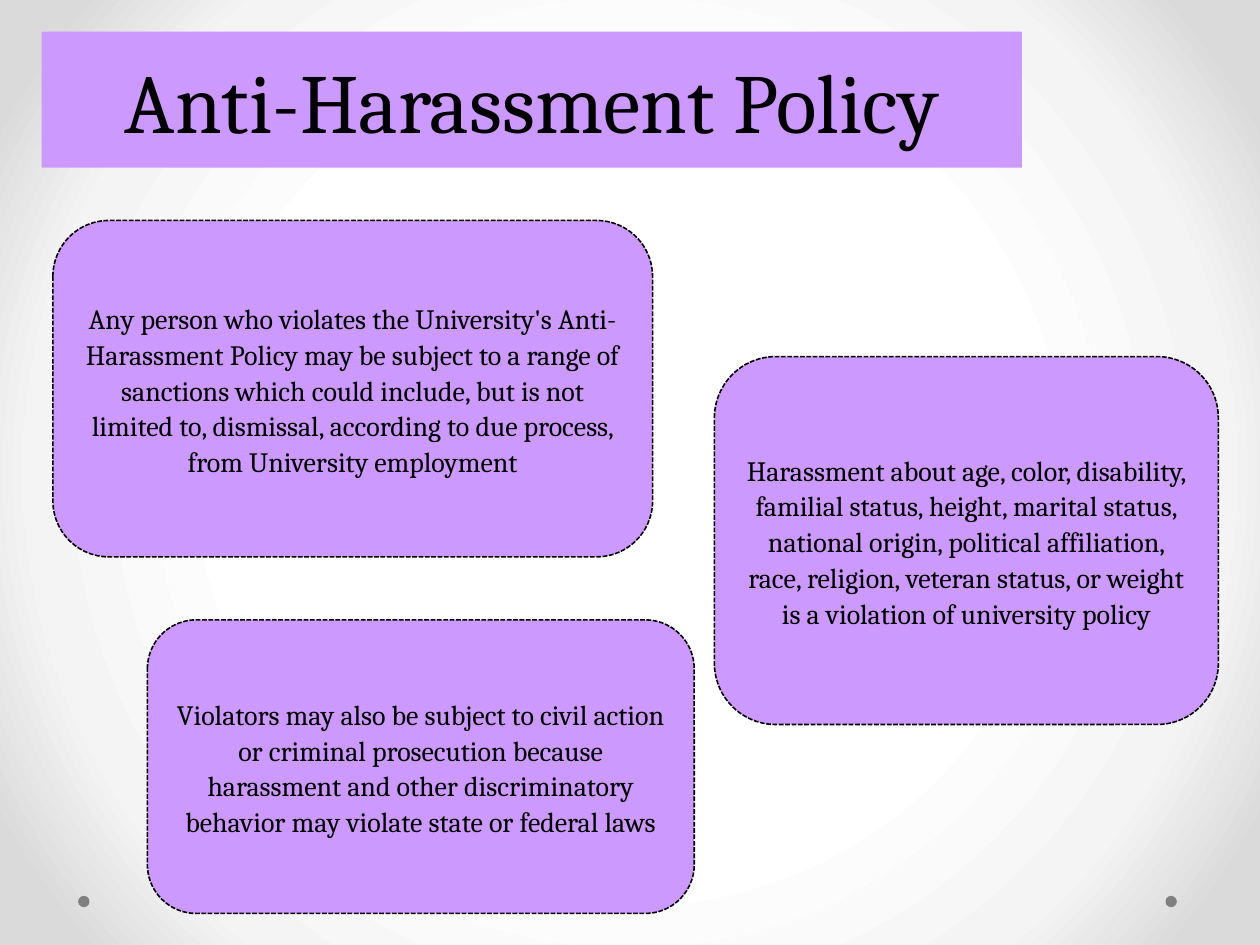
import pptx
import pptx.dml.color
import pptx.enum.dml
import pptx.enum.shapes
import pptx.enum.text
import pptx.oxml
import pptx.oxml.ns
import pptx.util

Inches = pptx.util.Inches
Pt = pptx.util.Pt
RGBColor = pptx.dml.color.RGBColor
Shape = pptx.enum.shapes.MSO_SHAPE

LILAC = RGBColor(0xCC, 0x99, 0xFF)
BLACK = RGBColor(0, 0, 0)
GRAY = RGBColor(0x80, 0x80, 0x80)
FONT = "Cambria"

BACKGROUND_STOPS = [(50, "FFFFFF"), (76, "F4F4F4"), (92, "DADADA")]
DOT_LEFTS = [0.62, 9.25]
POLICIES = [
    ((5.67, 2.83, 4, 2.92),
     "Harassment about age, color, disability, familial status, height, "
     "marital status, national origin, political affiliation, race, religion, "
     "veteran status, or weight is a violation of university policy"),
    ((0.42, 1.75, 4.76, 2.67),
     "Any person who violates the University's Anti-Harassment Policy may be "
     "subject to a range of sanctions which could include, but is not limited "
     "to, dismissal, according to due process, from University employment"),
    ((1.17, 4.92, 4.34, 2.33),
     "Violators may also be subject to civil action or criminal prosecution "
     "because harassment and other discriminatory behavior may violate state "
     "or federal laws"),
]


def paint_background(page):
    page.background.fill.gradient()
    gradient = page.element.xpath(".//p:bgPr/a:gradFill")[0]
    stops = "".join(
        f'<a:gs pos="{position * 1000}"><a:srgbClr val="{color}"/></a:gs>'
        for position, color in BACKGROUND_STOPS)
    radial = pptx.oxml.parse_xml(
        f'<a:gradFill {pptx.oxml.ns.nsdecls("a")} rotWithShape="1">'
        f'<a:gsLst>{stops}</a:gsLst><a:path path="circle">'
        '<a:fillToRect l="50000" t="50000" r="50000" b="50000"/>'
        '</a:path></a:gradFill>')
    gradient.getparent().replace(gradient, radial)


def fill_solid(shape, color):
    shape.fill.solid()
    shape.fill.fore_color.rgb = color


def write(shape, text, size, spacing):
    frame = shape.text_frame
    frame.word_wrap = True
    frame.auto_size = pptx.enum.text.MSO_AUTO_SIZE.NONE
    frame.vertical_anchor = pptx.enum.text.MSO_ANCHOR.MIDDLE
    para = frame.paragraphs[0]
    para.alignment = pptx.enum.text.PP_ALIGN.CENTER
    para.line_spacing = spacing
    span = para.add_run()
    span.text = text
    span.font.name = FONT
    span.font.size = Pt(size)
    span.font.color.rgb = BLACK


def add_dot(page, left):
    dot = page.shapes.add_shape(
        Shape.OVAL, Inches(left), Inches(7.11), Inches(0.09), Inches(0.09))
    dot.shadow.inherit = False
    fill_solid(dot, GRAY)
    dot.line.fill.background()


def format_title(page):
    title = page.shapes.title
    title.left, title.top = Inches(0.33), Inches(0.25)
    title.width, title.height = Inches(7.78), Inches(1.08)
    fill_solid(title, LILAC)
    write(title, "Anti-Harassment Policy", 48, Pt(58))


def add_policy(page, place, text):
    box = page.shapes.add_shape(
        Shape.ROUNDED_RECTANGLE, *(Inches(length) for length in place))
    box.shadow.inherit = False
    fill_solid(box, LILAC)
    box.line.color.rgb = BLACK
    box.line.width = Pt(0.9)
    box.line.dash_style = pptx.enum.dml.MSO_LINE.SQUARE_DOT
    write(box, text, 16, 1.07)
    box.text_frame.paragraphs[0].space_after = Pt(8)


def main():
    deck = pptx.Presentation()
    deck.slide_width = Inches(10)
    deck.slide_height = Inches(7.5)
    page = deck.slides.add_slide(deck.slide_layouts[5])
    paint_background(page)
    format_title(page)
    for left in DOT_LEFTS:
        add_dot(page, left)
    for place, text in POLICIES:
        add_policy(page, place, text)
    deck.save("out.pptx")


if __name__ == "__main__":
    main()
